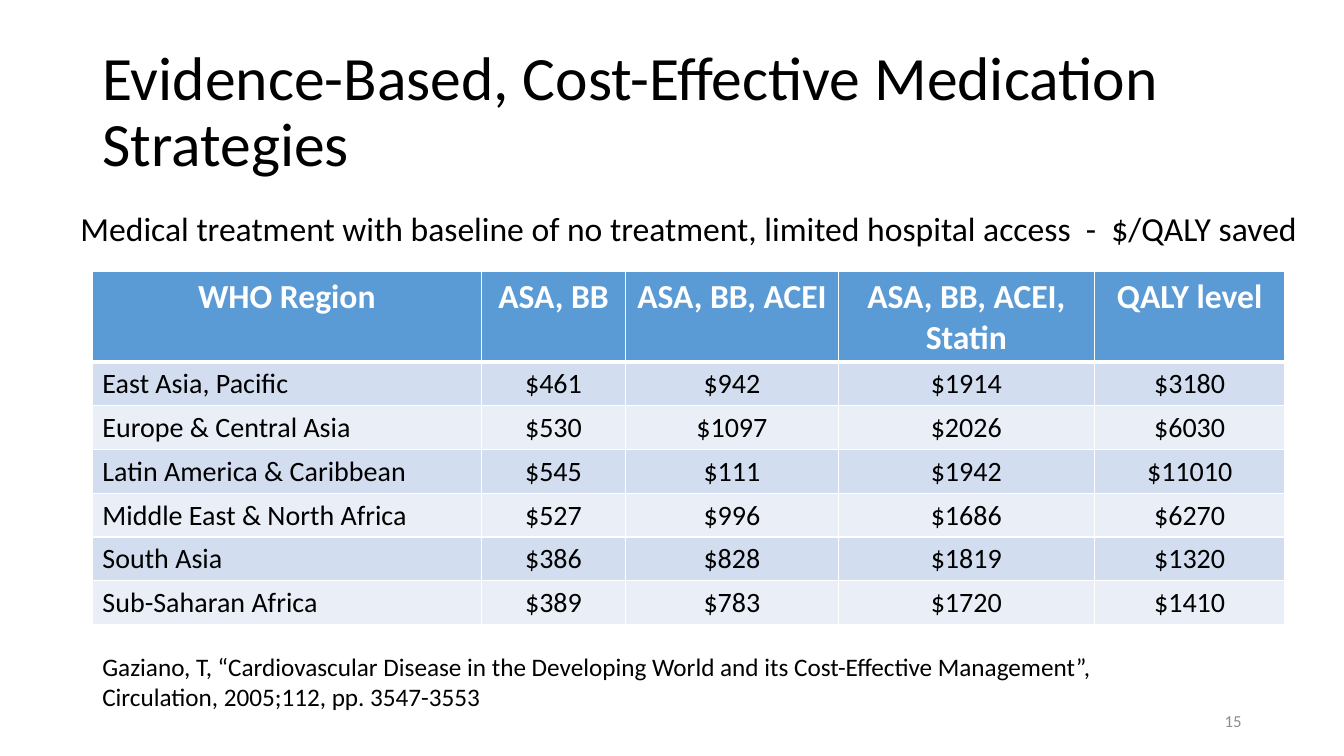
from lxml.etree import SubElement
from pptx import Presentation
from pptx.dml.color import RGBColor
from pptx.enum.text import MSO_ANCHOR, PP_ALIGN
from pptx.oxml.ns import qn
from pptx.util import Inches, Pt

GRID_COLUMNS, GRID_ROWS = 160, 90
SLIDE_WIDTH, SLIDE_HEIGHT = Inches(13.333), Inches(7.5)
FONT = "Calibri"
COLORS = {
    "text": "000000",
    "header_text": "FFFFFF",
    "page_number": "8C8C8C",
    "header": "5B9BD5",
    "odd_row": "D2DEEF",
    "even_row": "EAEFF7",
    "border": "FFFFFF",
}
COLUMN_WIDTHS = [46.3, 17.2, 25.3, 30.5, 22.7]
ROW_HEIGHT = 4.92
COSTS = [
    ["WHO Region", "ASA, BB", "ASA, BB, ACEI", "ASA, BB, ACEI, Statin", "QALY level"],
    ["East Asia, Pacific", "$461", "$942", "$1914", "$3180"],
    ["Europe & Central Asia", "$530", "$1097", "$2026", "$6030"],
    ["Latin America & Caribbean", "$545", "$111", "$1942", "$11010"],
    ["Middle East & North Africa", "$527", "$996", "$1686", "$6270"],
    ["South Asia", "$386", "$828", "$1819", "$1320"],
    ["Sub-Saharan Africa", "$389", "$783", "$1720", "$1410"],
]


def across(columns):
    return round(SLIDE_WIDTH * columns / GRID_COLUMNS)


def down(rows):
    return round(SLIDE_HEIGHT * rows / GRID_ROWS)


def place(left, top, width, height):
    return across(left), down(top), across(width), down(height)


def write_text(frame, text, size=18, color="text", bold=False,
               align=PP_ALIGN.LEFT, line_spacing=None):
    paragraph = frame.paragraphs[0]
    paragraph.alignment = align
    paragraph.line_spacing = line_spacing
    run = paragraph.add_run()
    run.text = text
    run.font.name = FONT
    run.font.size = Pt(size)
    run.font.bold = bold
    run.font.color.rgb = RGBColor.from_string(COLORS[color])


def add_text(slide, text, box, anchor=MSO_ANCHOR.TOP, **text_format):
    frame = slide.shapes.add_textbox(*place(*box)).text_frame
    frame.word_wrap = True
    frame.vertical_anchor = anchor
    write_text(frame, text, **text_format)


def set_borders(cell, **widths):
    properties = cell._tc.get_or_add_tcPr()
    for side, width in widths.items():
        line = SubElement(properties, qn(f"a:ln{side}"), w=str(Pt(width)))
        fill = SubElement(line, qn("a:solidFill"))
        SubElement(fill, qn("a:srgbClr"), val=COLORS["border"])


def fill_cell(cell, text, row, column):
    is_header = row == 0
    set_borders(cell, L=1, R=1, T=3 if row == 1 else 1, B=3 if is_header else 1)
    cell.fill.solid()
    fill = "header" if is_header else "odd_row" if row % 2 else "even_row"
    cell.fill.fore_color.rgb = RGBColor.from_string(COLORS[fill])
    write_text(
        cell.text_frame, text,
        size=24 if is_header else 20,
        color="header_text" if is_header else "text",
        bold=is_header,
        align=PP_ALIGN.CENTER if is_header or column else PP_ALIGN.LEFT,
    )


def add_cost_table(slide, values, box):
    frame = slide.shapes.add_table(len(values), len(values[0]), *place(*box))
    table = frame.table
    for column, width in zip(table.columns, COLUMN_WIDTHS):
        column.width = across(width)
    for row in table.rows:
        row.height = down(ROW_HEIGHT)
    frame.height = down(box[3])
    for row, texts in enumerate(values):
        for column, text in enumerate(texts):
            fill_cell(table.cell(row, column), text, row, column)


def main():
    presentation = Presentation()
    presentation.slide_width = SLIDE_WIDTH
    presentation.slide_height = SLIDE_HEIGHT
    slide = presentation.slides.add_slide(presentation.slide_layouts[6])
    add_text(slide, "Evidence-Based, Cost-Effective Medication Strategies",
             (11, 4.8, 138, 17.4), anchor=MSO_ANCHOR.MIDDLE, size=44, line_spacing=0.9)
    add_cost_table(slide, COSTS, (11, 32.3, 142, 42))
    add_text(slide, "Medical treatment with baseline of no treatment, "
             "limited hospital access  -  $/QALY saved",
             (8.4, 24.2, 148.8, 6), size=24)
    add_text(slide, "Gaziano, T, “Cardiovascular Disease in the Developing World "
             "and its Cost-Effective Management”, Circulation, 2005;112, pp. 3547-3553",
             (11, 76.9, 134.4, 8.5), size=18)
    add_text(slide, "15", (113, 83.4, 36, 4.8), anchor=MSO_ANCHOR.MIDDLE,
             size=12, color="page_number", align=PP_ALIGN.RIGHT)
    presentation.save("out.pptx")


if __name__ == "__main__":
    main()
